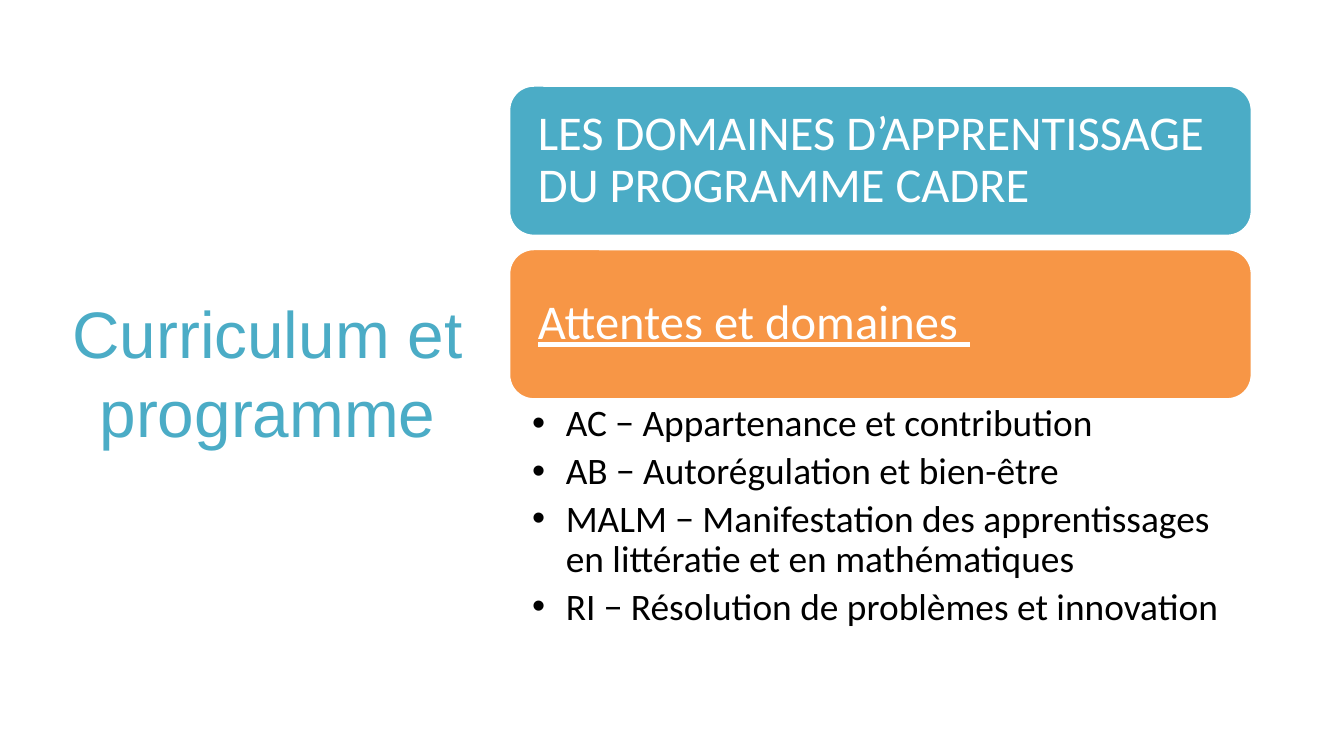
"""Build the slide on the learning domains of the curriculum framework."""
from lxml import etree
from pptx import Presentation
from pptx.dml.color import RGBColor
from pptx.enum.shapes import MSO_SHAPE
from pptx.enum.text import MSO_ANCHOR, MSO_AUTO_SIZE, PP_ALIGN
from pptx.oxml.ns import qn
from pptx.util import Pt

ROUNDED = MSO_SHAPE.ROUNDED_RECTANGLE
MIDDLE, TOP = MSO_ANCHOR.MIDDLE, MSO_ANCHOR.TOP
CENTER, LEFT = PP_ALIGN.CENTER, PP_ALIGN.LEFT
NO_FIT = MSO_AUTO_SIZE.NONE

TITLE = "Curriculum et programme"
BANNERS = [
    ("LES DOMAINES D’APPRENTISSAGE DU PROGRAMME CADRE", "teal", False),
    ("Attentes et domaines ", "orange", True),
]
DOMAINS = [
    "AC − Appartenance et contribution",
    "AB − Autorégulation et bien-être",
    "MALM − Manifestation des apprentissages en littératie et en mathématiques",
    "RI − Résolution de problèmes et innovation",
]

THEME = {
    "teal": RGBColor.from_string("4BACC6"),
    "orange": RGBColor.from_string("F79646"),
    "white": RGBColor.from_string("FFFFFF"),
    "black": RGBColor.from_string("000000"),
    "title_font": "Arial",
    "body_font": "Calibri",
    "title_size": 35.2,
    "banner_size": 26,
    "domain_size": 20,
}

SLIDE_WIDTH, SLIDE_HEIGHT = 720, 405
TITLE_BOX = (31, 36.75, 224.5, 324.5)
COLUMN_LEFT, COLUMN_TOP, COLUMN_WIDTH = 272.4, 45.5, 398.6
BANNER_HEIGHT, BANNER_GAP = 81.2, 6.4
DOMAINS_HEIGHT = 131
BULLET_INDENT = 18


def set_values(target, values):
    for attribute, value in values.items():
        setattr(target, attribute, value)


def place(part, box):
    edges = ("left", "top", "width", "height")
    set_values(part, dict(zip(edges, map(Pt, box))))


def format_frame(frame, anchor, insets):
    sides = ("margin_left", "margin_top", "margin_right", "margin_bottom")
    set_values(frame, dict(zip(sides, map(Pt, insets))))
    set_values(frame, {"word_wrap": True, "auto_size": NO_FIT, "vertical_anchor": anchor})


def format_paragraph(paragraph, role, color, align, spacing, after=0, underline=False):
    set_values(paragraph, {
        "alignment": align, "line_spacing": spacing,
        "space_before": Pt(0), "space_after": Pt(after),
    })
    family = "title_font" if role == "title" else "body_font"
    set_values(paragraph.runs[0].font, {
        "name": THEME[family], "size": Pt(THEME[f"{role}_size"]), "underline": underline,
    })
    paragraph.runs[0].font.color.rgb = THEME[color]


def add_bullet(paragraph):
    properties = paragraph._p.get_or_add_pPr()
    properties.set("marL", str(Pt(BULLET_INDENT)))
    properties.set("indent", str(-Pt(BULLET_INDENT)))
    etree.SubElement(properties, qn("a:buFont")).set("typeface", THEME["title_font"])
    etree.SubElement(properties, qn("a:buChar")).set("char", "•")


def add_title(slide):
    title = slide.shapes.title
    place(title, TITLE_BOX)
    title.text_frame.text = TITLE
    format_frame(title.text_frame, MIDDLE, (7.2, 3.6, 7.2, 3.6))
    format_paragraph(title.text_frame.paragraphs[0], "title", "teal", CENTER, 1.0)


def add_banner(slide, top, text, color, underline):
    box = map(Pt, (COLUMN_LEFT, top, COLUMN_WIDTH, BANNER_HEIGHT))
    banner = slide.shapes.add_shape(ROUNDED, *box)
    banner.shadow.inherit = False
    banner.fill.solid()
    banner.fill.fore_color.rgb = THEME[color]
    banner.line.color.rgb = THEME["white"]
    banner.line.width = Pt(2)
    banner.text_frame.text = text
    format_frame(banner.text_frame, MIDDLE, (11.8,) * 4)
    format_paragraph(banner.text_frame.paragraphs[0], "banner", "white", LEFT, 0.9,
                     underline=underline)


def add_domains(slide, top):
    body = slide.placeholders[1]
    place(body, (COLUMN_LEFT, top, COLUMN_WIDTH, DOMAINS_HEIGHT))
    frame = body.text_frame
    frame.text = "\n".join(DOMAINS)
    format_frame(frame, TOP, (12.7, 2.4, 14.2, 2.4))
    for paragraph in frame.paragraphs:
        paragraph.level = 1
        add_bullet(paragraph)
        format_paragraph(paragraph, "domain", "black", LEFT, 0.9, after=4)


def main():
    deck = Presentation()
    deck.slide_width, deck.slide_height = Pt(SLIDE_WIDTH), Pt(SLIDE_HEIGHT)
    slide = deck.slides.add_slide(deck.slide_layouts[1])
    add_title(slide)
    step = BANNER_HEIGHT + BANNER_GAP
    for row, banner in enumerate(BANNERS):
        add_banner(slide, COLUMN_TOP + row * step, *banner)
    add_domains(slide, COLUMN_TOP + len(BANNERS) * step - BANNER_GAP)
    deck.save("out.pptx")


if __name__ == "__main__":
    main()
